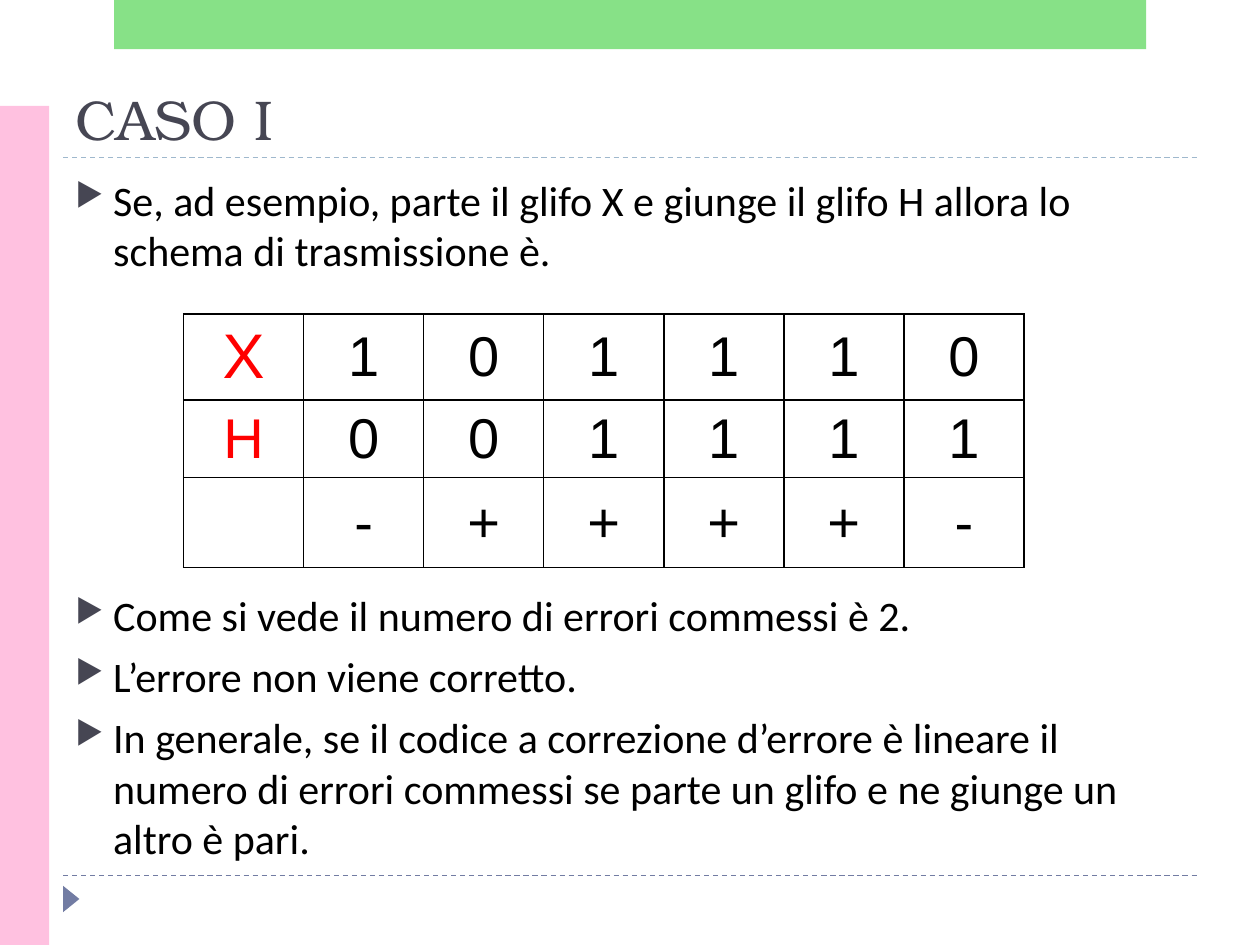
from lxml import etree
from pptx import Presentation
from pptx.dml.color import RGBColor
from pptx.enum.dml import MSO_LINE_DASH_STYLE as Dash
from pptx.enum.shapes import MSO_CONNECTOR as Link, MSO_SHAPE as Kind
from pptx.enum.text import MSO_ANCHOR as Anchor, PP_ALIGN as Align
from pptx.oxml import parse_xml
from pptx.oxml.ns import nsdecls, qn
from pptx.util import Pt

BLACK = RGBColor(0, 0, 0)
WHITE = RGBColor(0xFF, 0xFF, 0xFF)
RED = RGBColor(0xFF, 0, 0)
SLATE = RGBColor(0x46, 0x46, 0x53)
BLUE = RGBColor(0x72, 0x7C, 0xA3)
PALE = RGBColor(0x9F, 0xB8, 0xCD)
PINK = RGBColor(0xFF, 0xC1, 0xE0)
GREEN = RGBColor(0x62, 0xD8, 0x62)


def add_box(left, top, width, height, anchor):
    frame = shapes.add_textbox(Pt(left), Pt(top), Pt(width), Pt(height)).text_frame
    frame.word_wrap = True
    frame.vertical_anchor = anchor
    return frame


def add_bullet(para):
    """Give a paragraph a hanging triangle bullet."""
    props = para._p.get_or_add_pPr()
    props.set("marL", str(Pt(21.6)))
    props.set("indent", str(-Pt(21.6)))
    for tag, inner in (
        ("buClr", f'><a:srgbClr val="{SLATE}"/></a:buClr>'),
        ("buSzPct", ' val="76000"/>'),
        ("buChar", ' char="▶"/>'),
    ):
        props.append(parse_xml(f'<a:{tag} {nsdecls("a")}{inner}'))


prs = Presentation()
prs.slide_width, prs.slide_height = Pt(720), Pt(540)
slide = prs.slides.add_slide(prs.slide_layouts[6])
shapes = slide.shapes

# Rules above and below the body
for y, color in ((500.4, BLUE), (90, PALE)):
    rule = shapes.add_connector(Link.STRAIGHT, Pt(36), Pt(y), Pt(684), Pt(y))
    rule.line.color.rgb = color
    rule.line.width = Pt(0.75)
    rule.line.dash_style = Dash.DASH
    etree.SubElement(rule._element.spPr, qn("a:effectLst"))

# Corner marker, side band and top band
for kind, left, top, width, height, color, turn, alpha in (
    (Kind.ISOSCELES_TRIANGLE, 33.12, 509.04, 15.12, 9.36, BLUE, 90, 100),
    (Kind.RECTANGLE, 0, 60.48, 28.08, 479.52, PINK, 0, 100),
    (Kind.RECTANGLE, 65.2, 0, 589.7, 28.08, GREEN, 0, 76),
):
    deco = shapes.add_shape(kind, Pt(left), Pt(top), Pt(width), Pt(height))
    deco.shadow.inherit = False
    deco.rotation = turn
    deco.fill.solid()
    deco.fill.fore_color.rgb = color
    deco.line.fill.background()
    if alpha < 100:
        tint = deco._element.spPr.find(".//" + qn("a:srgbClr"))
        etree.SubElement(tint, qn("a:alpha")).set("val", str(alpha * 1000))

# Title
title = add_box(36, 39.6, 648, 50.4, Anchor.BOTTOM).paragraphs[0]
title.text = "CASO I"
title.font.name = "TeX Gyre Bonum"
title.font.size = Pt(32)
title.font.color.rgb = SLATE

# Body text above and below the table
for top, height, lines in (
    (96, 70, [
        "Se, ad esempio, parte il glifo X e giunge il glifo H allora lo "
        "schema di trasmissione è.",
    ]),
    (333.5, 165, [
        "Come si vede il numero di errori commessi è 2.",
        "L’errore non viene corretto.",
        "In generale, se il codice a correzione d’errore è lineare il numero di "
        "errori commessi se parte un glifo e ne giunge un altro è pari.",
    ]),
):
    body = add_box(36, top, 648, height, Anchor.TOP)
    for i, line in enumerate(lines):
        para = body.paragraphs[0] if i == 0 else body.add_paragraph()
        para.text = line
        if i:
            para.space_before = Pt(6)
        add_bullet(para)
        para.font.name = "Calibri"
        para.font.size = Pt(24)
        para.font.color.rgb = BLACK

# Transmission table
ROWS = ("X101110", "H001111", " -++++-")
TALL = (47.4, 42.9, 51.4)
table = shapes.add_table(
    3, 7, Pt(104.9), Pt(179.4), Pt(480.2), Pt(sum(TALL))
).table
table.first_row = table.horz_banding = False
for col in table.columns:
    col.width = Pt(68.6)
for r, marks in enumerate(ROWS):
    table.rows[r].height = Pt(TALL[r])
    for c, mark in enumerate(marks):
        cell = table.cell(r, c)
        cell.margin_top = cell.margin_bottom = Pt(3)
        cell.vertical_anchor = Anchor.MIDDLE
        para = cell.text_frame.paragraphs[0]
        para.text = mark.strip()
        para.alignment = Align.CENTER
        para.font.name = "Arial"
        para.font.size = Pt(36 if mark == "X" else 32)
        para.font.color.rgb = BLACK if c else RED
        props = cell._tc.get_or_add_tcPr()
        for side in ("lnL", "lnR", "lnT", "lnB"):
            props.append(parse_xml(
                f'<a:{side} {nsdecls("a")} w="{Pt(1)}"><a:solidFill>'
                f'<a:srgbClr val="{BLACK}"/></a:solidFill></a:{side}>'
            ))
        cell.fill.solid()
        cell.fill.fore_color.rgb = WHITE

prs.save("out.pptx")
